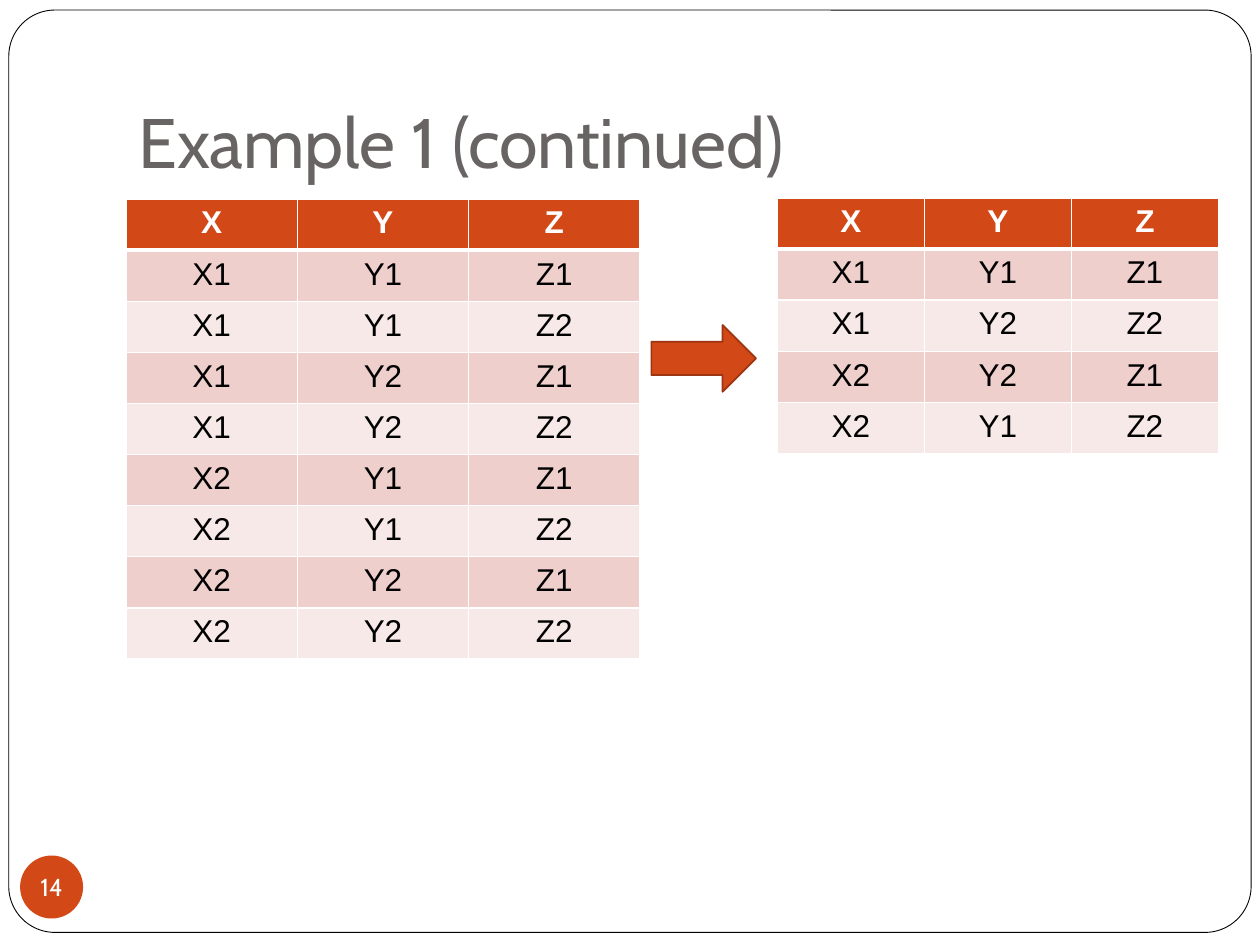
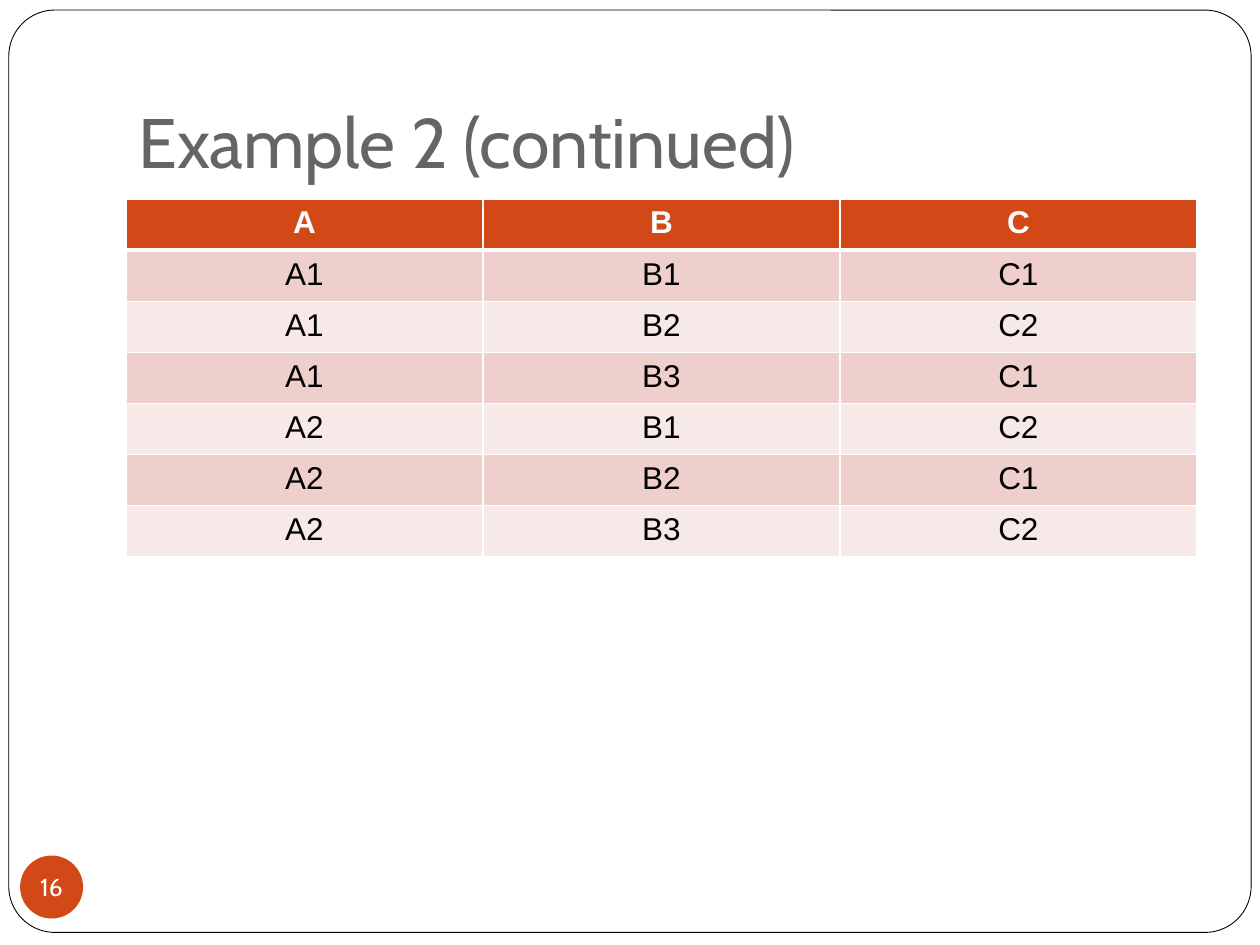
"""Build two slides of combination tables for Examples 1 and 2."""
import itertools

import lxml.etree
import pptx
import pptx.dml.color
import pptx.enum.shapes
import pptx.enum.text
import pptx.oxml.ns
import pptx.util

Inches = pptx.util.Inches
Pt = pptx.util.Pt
SHAPE = pptx.enum.shapes.MSO_SHAPE
ALIGN = pptx.enum.text.PP_ALIGN
ANCHOR = pptx.enum.text.MSO_ANCHOR

COLORS = {
    "paper": "FFFFFF",
    "ink": "000000",
    "title": "696464",
    "accent": "D34817",
    "accent_dark": "9C3511",
    "band_dark": "EFCFCC",
    "band_light": "F7E9E8",
}
HEADING_FONT = "Cabin"
TABLE_FONT = "Arial"


def rgb(name):
    """Return the named colour."""
    return pptx.dml.color.RGBColor.from_string(COLORS[name])


def format_text(tf, font, size, color, bold=False, align=ALIGN.LEFT):
    """Format every run of a text frame."""
    for p in tf.paragraphs:
        p.alignment = align
        for r in p.runs:
            r.font.name = font
            r.font.size = Pt(size)
            r.font.bold = bold
            r.font.color.rgb = rgb(color)


def set_margins(tf, left, top, right, bottom):
    """Set the insets of a text frame in inches."""
    tf.margin_left, tf.margin_top = Inches(left), Inches(top)
    tf.margin_right, tf.margin_bottom = Inches(right), Inches(bottom)


def add_shape(s, kind, left, top, width, height, fill, line=None, weight=1):
    """Add a flat preset shape, outlined only if a line colour is given."""
    sp = s.shapes.add_shape(kind, Inches(left), Inches(top), Inches(width), Inches(height))
    sp.shadow.inherit = False
    sp.fill.solid()
    sp.fill.fore_color.rgb = rgb(fill)
    if line:
        sp.line.color.rgb = rgb(line)
        sp.line.width = Pt(weight)
    else:
        sp.line.fill.background()
    return sp


def add_frame(s):
    """Add the rounded frame around the slide."""
    sp = add_shape(s, SHAPE.ROUNDED_RECTANGLE, 0.07, 0.08, 9.86, 7.32, "paper", "ink", 0.5)
    sp.adjustments[0] = 0.05


def add_title(s, text):
    """Add the slide title."""
    tf = s.shapes.add_textbox(Inches(1), Inches(0.3), Inches(8.5), Inches(1.25)).text_frame
    tf.word_wrap = True
    tf.vertical_anchor = ANCHOR.BOTTOM
    set_margins(tf, 0.1, 0.05, 0.1, 0.1)
    tf.text = text
    format_text(tf, HEADING_FONT, 40, "title")


def add_page_number(s, number):
    """Add the round page number badge."""
    tf = add_shape(s, SHAPE.OVAL, 0.16, 6.79, 0.5, 0.5, "accent").text_frame
    tf.word_wrap = False
    tf.vertical_anchor = ANCHOR.MIDDLE
    set_margins(tf, 0, 0, 0, 0)
    tf.text = str(number)
    format_text(tf, HEADING_FONT, 14, "paper", align=ALIGN.CENTER)


def set_borders(cell, top, bottom):
    """Give a cell white borders, with top and bottom widths in points."""
    qn = pptx.oxml.ns.qn
    tcPr = cell._tc.get_or_add_tcPr()
    for tag, width in (("a:lnL", 1), ("a:lnR", 1), ("a:lnT", top), ("a:lnB", bottom)):
        ln = lxml.etree.SubElement(tcPr, qn(tag), w=str(Pt(width)))
        fill = lxml.etree.SubElement(ln, qn("a:solidFill"))
        lxml.etree.SubElement(fill, qn("a:srgbClr"), val=COLORS["paper"])


def add_table(s, left, top, width, height, rows):
    """Add a banded table whose first row is the header."""
    table = s.shapes.add_table(
        len(rows), len(rows[0]), Inches(left), Inches(top), Inches(width), Inches(height)
    ).table
    for i, row in enumerate(rows):
        header = i == 0
        fill = "accent" if header else "band_dark" if i % 2 else "band_light"
        for j, text in enumerate(row):
            cell = table.cell(i, j)
            set_borders(cell, 3 if i == 1 else 1, 3 if header else 1)
            cell.fill.solid()
            cell.fill.fore_color.rgb = rgb(fill)
            cell.text_frame.text = text
            color = "paper" if header else "ink"
            format_text(cell.text_frame, TABLE_FONT, 18, color, header, ALIGN.CENTER)


def add_slide(prs, title, number):
    """Add a slide with the shared frame, title and page number."""
    s = prs.slides.add_slide(prs.slide_layouts[6])
    add_frame(s)
    add_title(s, title)
    add_page_number(s, number)
    return s


def main():
    """Build and save the presentation."""
    prs = pptx.Presentation()
    prs.slide_width, prs.slide_height = Inches(10), Inches(7.5)

    s = add_slide(prs, "Example 1 (continued)", 14)
    header = ("X", "Y", "Z")
    all_triples = list(itertools.product(("X1", "X2"), ("Y1", "Y2"), ("Z1", "Z2")))
    pairwise = [
        ("X1", "Y1", "Z1"),
        ("X1", "Y2", "Z2"),
        ("X2", "Y2", "Z1"),
        ("X2", "Y1", "Z2"),
    ]
    add_table(s, 1, 1.58, 4.08, 3.65, [header] + all_triples)
    add_table(s, 6.17, 1.57, 3.5, 2.03, [header] + pairwise)
    add_shape(s, SHAPE.RIGHT_ARROW, 5.17, 2.58, 0.83, 0.53, "accent", "accent_dark")

    s = add_slide(prs, "Example 2 (continued)", 16)
    add_table(s, 1, 1.58, 8.5, 2.84, [
        ("A", "B", "C"),
        ("A1", "B1", "C1"),
        ("A1", "B2", "C2"),
        ("A1", "B3", "C1"),
        ("A2", "B1", "C2"),
        ("A2", "B2", "C1"),
        ("A2", "B3", "C2"),
    ])

    prs.save("out.pptx")


if __name__ == "__main__":
    main()
